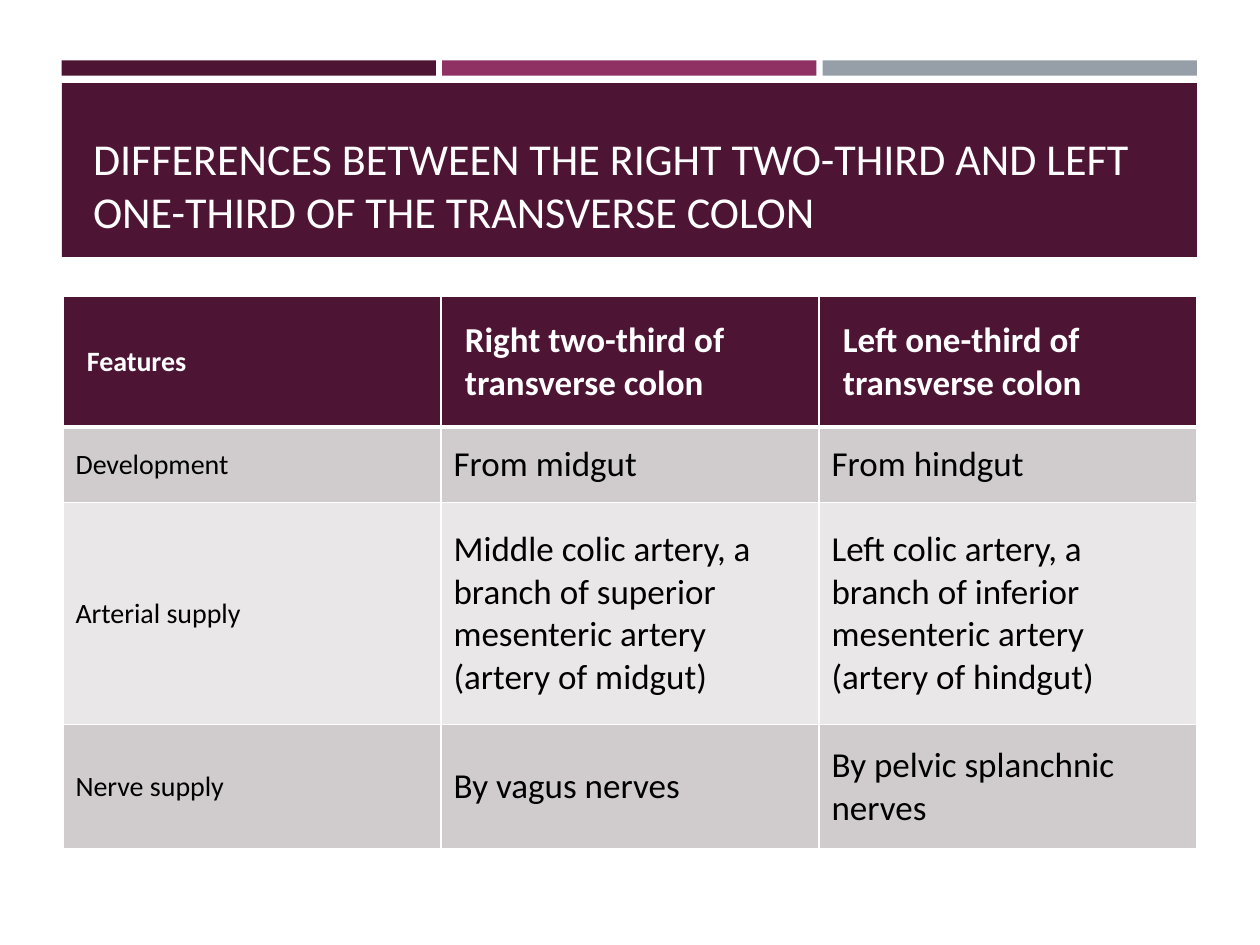
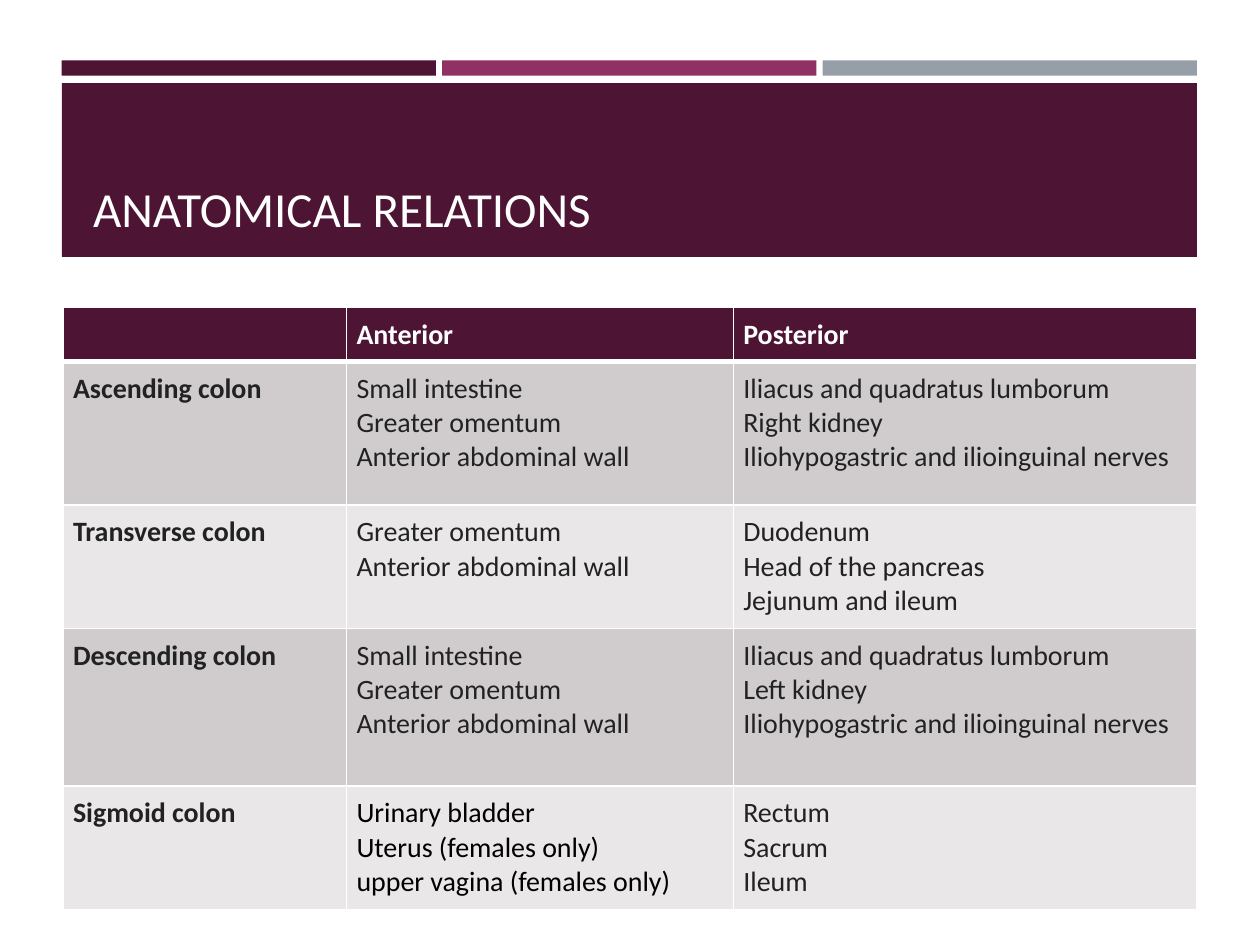
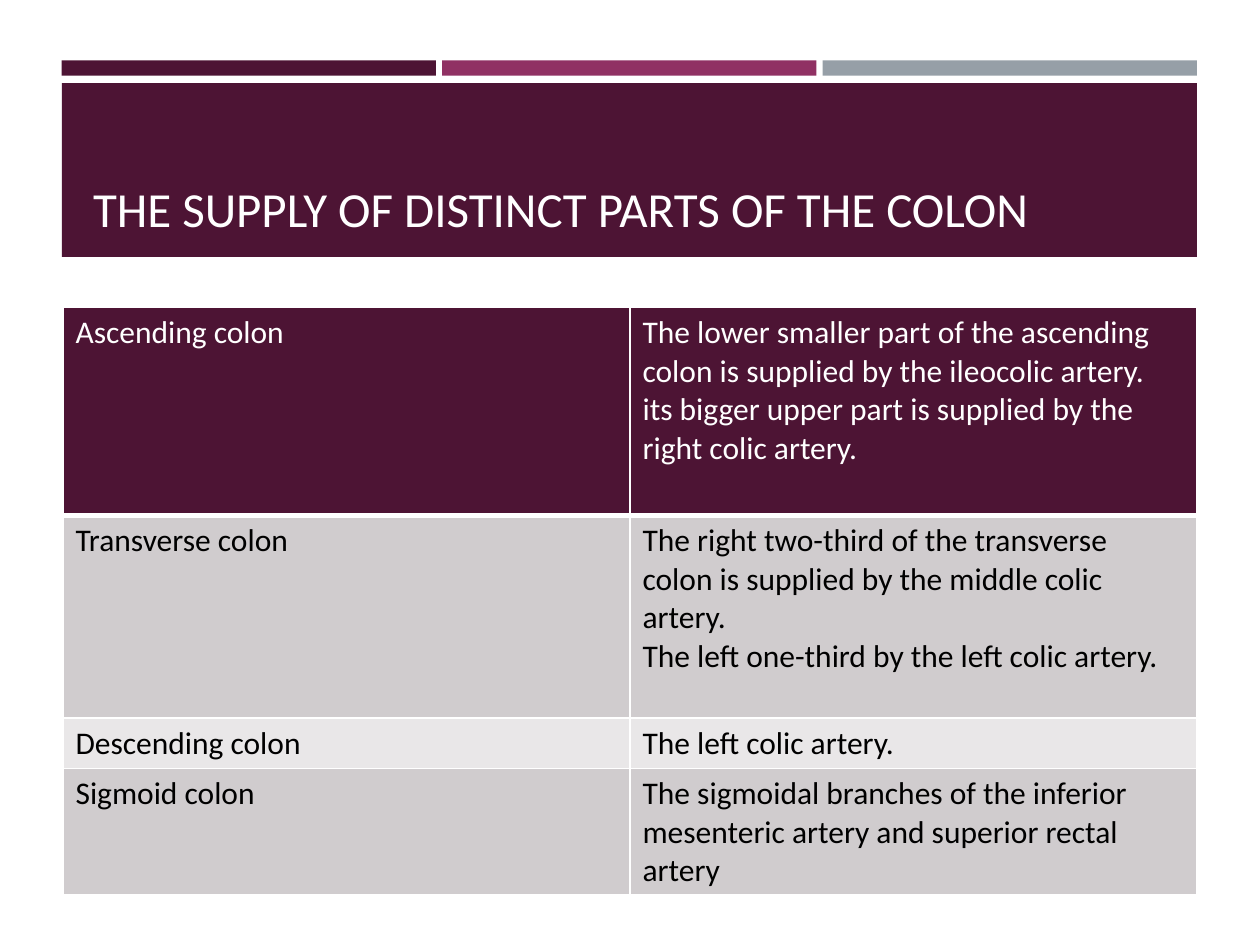
from lxml.etree import SubElement
from pptx import Presentation
from pptx.dml.color import RGBColor
from pptx.enum.shapes import MSO_SHAPE
from pptx.enum.text import MSO_ANCHOR as ANCHOR, PP_ALIGN as ALIGN
from pptx.oxml.ns import qn
from pptx.util import Inches, Pt

COLORS = {
    "plum": "4D1434", "magenta": "903163", "slate": "969FA7",
    "white": "FFFFFF", "black": "000000", "charcoal": "222222",
    "band_dark": "D0CCCE", "band_light": "E9E7E8",
}


def rgb(name):
    return RGBColor.from_string(COLORS[name])


class Deck:
    font = "Calibri"

    def __init__(self):
        self.prs = Presentation()
        self.prs.slide_width, self.prs.slide_height = Inches(10), Inches(7.5)
        self.s = None

    def add_slide(self, title, size=28):
        """Start a slide with the three strips, the title band and the title."""
        self.s = self.prs.slides.add_slide(self.prs.slide_layouts[6])
        for i, color in enumerate(("plum", "magenta", "slate")):
            self.bar(0.49 + i * 3.02, 0.48, 2.97, 0.12, color)
        self.bar(0.49, 0.66, 9.01, 1.38, "plum")
        self.title(title, size)

    def bar(self, x, y, w, h, color):
        sp = self.s.shapes.add_shape(
            MSO_SHAPE.RECTANGLE, Inches(x), Inches(y), Inches(w), Inches(h))
        sp.shadow.inherit = False
        sp.fill.solid()
        sp.fill.fore_color.rgb = rgb(color)
        sp.line.fill.background()

    def title(self, text, size):
        tf = self.s.shapes.add_textbox(
            Inches(0.64), Inches(0.75), Inches(8.74), Inches(1.18)).text_frame
        tf.word_wrap = True
        tf.vertical_anchor = ANCHOR.BOTTOM
        tf.text = text
        self.style(tf, size, "white")

    def style(self, tf, size, color, bold=False, align=ALIGN.LEFT):
        for p in tf.paragraphs:
            p.alignment = align
            p.font.name, p.font.size, p.font.bold = self.font, Pt(size), bold
            p.font.color.rgb = rgb(color)

    def table(self, top, widths, heights, rows, sizes, inset, head_inset=None,
              ink="black", anchor=ANCHOR.TOP, bold_head=True,
              bold_labels=False, align=ALIGN.LEFT):
        """Add a banded table; sizes gives one font size per column."""
        table = self.s.shapes.add_table(
            len(rows), len(widths), Inches(0.5), Inches(top),
            Inches(sum(widths)), Inches(sum(heights))).table
        for column, w in zip(table.columns, widths):
            column.width = Inches(w)
        for i, (row, h) in enumerate(zip(rows, heights)):
            table.rows[i].height = Inches(h)
            head = i == 0
            fill = "plum" if head else ("band_light", "band_dark")[i % 2]
            for j, text in enumerate(row):
                cell = table.cell(i, j)
                cell.text = text
                cell.vertical_anchor = anchor
                self.margins(cell, head_inset if head and head_inset else inset)
                cell.fill.solid()
                cell.fill.fore_color.rgb = rgb(fill)
                self.borders(cell, top=3 if i == 1 else 1, bottom=3 if head else 1)
                self.style(cell.text_frame, sizes[j], "white" if head else ink,
                           bold_head if head else bold_labels and j == 0,
                           ALIGN.LEFT if head or j == 0 else align)
        return table

    def margins(self, cell, inset):
        across, down = (Inches(v) for v in inset)
        cell.margin_left = cell.margin_right = across
        cell.margin_top = cell.margin_bottom = down

    def borders(self, cell, top, bottom):
        """Draw white cell borders; top and bottom are widths in points."""
        tc_pr = cell._tc.get_or_add_tcPr()
        sides = {"a:lnL": 1, "a:lnR": 1, "a:lnT": top, "a:lnB": bottom}
        for i, (tag, width) in enumerate(sides.items()):
            ln = SubElement(tc_pr, qn(tag), w=str(Pt(width)))
            SubElement(SubElement(ln, qn("a:solidFill")), qn("a:srgbClr"),
                       val=COLORS["white"])
            tc_pr.insert(i, ln)


def differences(deck):
    deck.add_slide("DIFFERENCES BETWEEN THE RIGHT TWO-THIRD AND LEFT "
                   "ONE-THIRD OF THE TRANSVERSE COLON", 25.2)
    rows = [
        ("Features", "Right two-third of transverse colon",
         "Left one-third of transverse colon"),
        ("Development", "From midgut", "From hindgut"),
        ("Arterial supply",
         "Middle colic artery, a branch of superior mesenteric artery (artery of midgut)",
         "Left colic artery, a branch of inferior mesenteric artery (artery of hindgut)"),
        ("Nerve supply", "By vagus nerves", "By pelvic splanchnic nerves"),
    ]
    deck.table(2.35, [3] * 3, [1.04, 0.6, 1.76, 0.99], rows, sizes=(16, 20, 20),
               inset=(0.1, 0.08), head_inset=(0.19, 0.1), anchor=ANCHOR.MIDDLE)


def relations(deck):
    deck.add_slide("ANATOMICAL RELATIONS")
    wall = "Greater omentum\nAnterior abdominal wall"
    flank = "Iliacus and quadratus lumborum\n{} kidney\nIliohypogastric and ilioinguinal nerves"
    rows = [
        ("", "Anterior", "Posterior"),
        ("Ascending colon", "Small intestine\n" + wall, flank.format("Right")),
        ("Transverse colon", wall,
         "Duodenum\nHead of the pancreas\nJejunum and ileum"),
        ("Descending colon", "Small intestine\n" + wall, flank.format("Left")),
        ("Sigmoid colon",
         "Urinary bladder\nUterus (females only)\nupper vagina (females only)",
         "Rectum\nSacrum\nIleum"),
    ]
    table = deck.table(2.44, [2.25, 3.07, 3.68], [0.43, 1.14, 0.98, 1.25, 0.98],
                       rows, sizes=[16] * 3, inset=(0.08, 0.08), ink="charcoal",
                       bold_labels=True, align=ALIGN.JUSTIFY)
    deck.style(table.cell(4, 1).text_frame, 16, "black", align=ALIGN.JUSTIFY)


def supply(deck):
    deck.add_slide("THE SUPPLY OF DISTINCT PARTS OF THE COLON")
    rows = [
        ("Ascending colon",
         "The lower smaller part of the ascending colon is supplied by the ileocolic artery.\n"
         "its bigger upper part is supplied by the right colic artery."),
        ("Transverse colon",
         "The right two-third of the transverse colon is supplied by the middle colic artery.\n"
         "The left one-third by the left colic artery."),
        ("Descending colon", "The left colic artery."),
        ("Sigmoid colon",
         "The sigmoidal branches of the inferior mesenteric artery and superior rectal artery"),
    ]
    deck.table(2.44, [4.5] * 2, [1.65, 1.61, 0.4, 1], rows, sizes=[18] * 2,
               inset=(0.1, 0.05), bold_head=False)


def main():
    deck = Deck()
    for build in (differences, relations, supply):
        build(deck)
    deck.prs.save("out.pptx")


if __name__ == "__main__":
    main()
